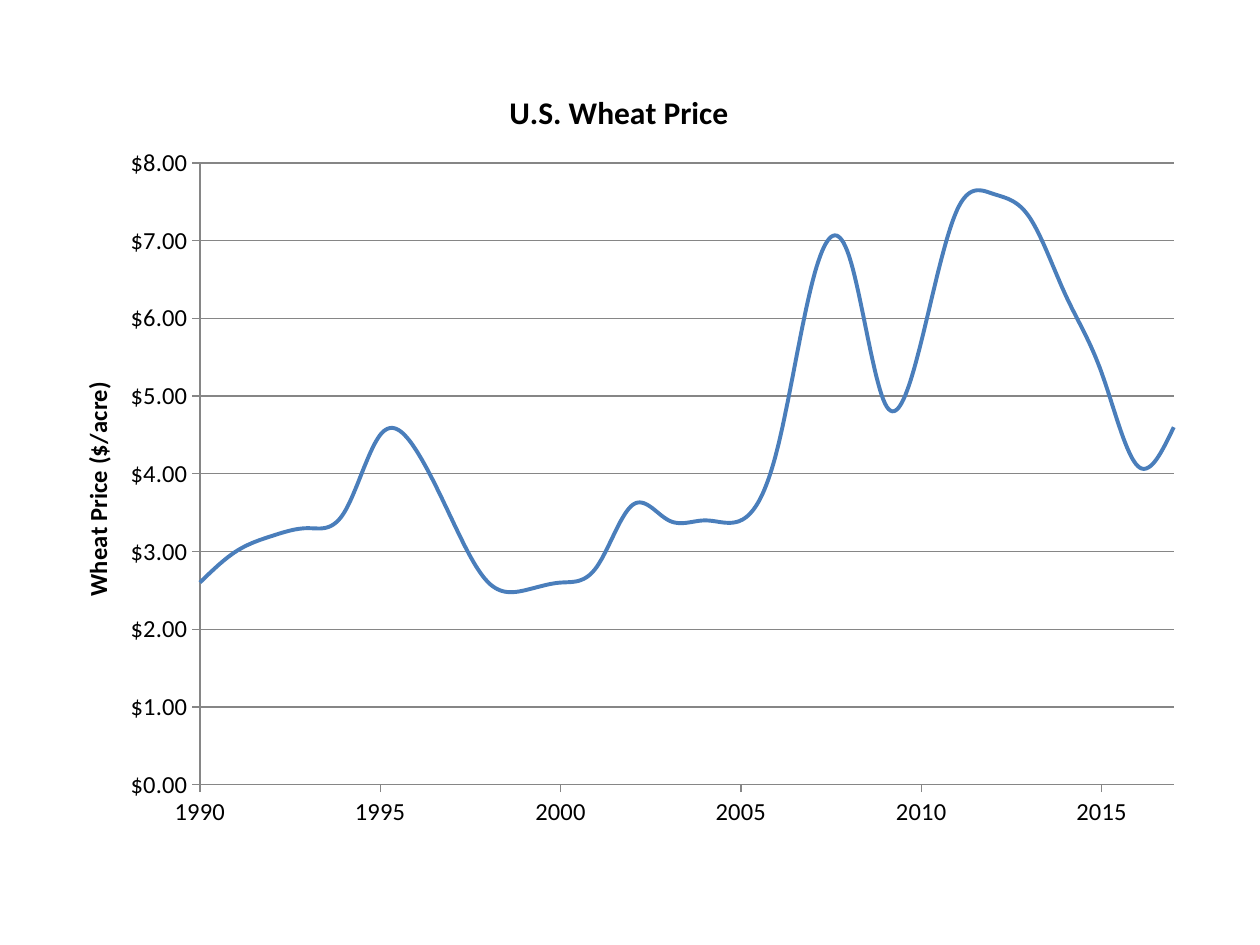
from lxml import etree
from pptx import Presentation
from pptx.chart.data import XyChartData
from pptx.dml.color import RGBColor
from pptx.enum.chart import XL_CHART_TYPE, XL_MARKER_STYLE, XL_TICK_MARK
from pptx.oxml.ns import qn
from pptx.util import Inches, Pt

SMOOTH_SCATTER = XL_CHART_TYPE.XY_SCATTER_SMOOTH_NO_MARKERS
NO_MARKER = XL_MARKER_STYLE.NONE
TICK_OUT, TICK_NONE = XL_TICK_MARK.OUTSIDE, XL_TICK_MARK.NONE

WIDTH, HEIGHT = Inches(10), Inches(7.5)
FONT = "Calibri"
BLACK, GREY, BLUE = "000000", "868686", "4A7EBB"
FIRST_YEAR, LAST_YEAR = 1990, 2017
PRICES = [2.6, 3, 3.2, 3.3, 3.5, 4.5, 4.3, 3.4, 2.6, 2.5,
          2.6, 2.8, 3.6, 3.4, 3.4, 3.4, 4.3, 6.5, 6.8, 4.9,
          5.7, 7.4, 7.6, 7.3, 6.3, 5.3, 4.1, 4.6]


def color(hex_value):
    return RGBColor.from_string(hex_value)


def style_font(font, size, bold=False):
    font.name = FONT
    font.size = Pt(size)
    font.bold = bold
    font.color.rgb = color(BLACK)


def style_line(line, hex_value, width):
    line.color.rgb = color(hex_value)
    line.width = Pt(width)


def place(element, index, **shares):
    """Fix the layout of a chart part, in shares of the chart's size."""
    for old in element.findall(qn("c:layout")):
        element.remove(old)
    layout = etree.Element(qn("c:layout"))
    manual = etree.SubElement(layout, qn("c:manualLayout"))
    if "w" in shares:
        etree.SubElement(manual, qn("c:layoutTarget")).set("val", "inner")
    for key in ("x", "y"):
        etree.SubElement(manual, qn(f"c:{key}Mode")).set("val", "edge")
    for key, share in shares.items():
        etree.SubElement(manual, qn(f"c:{key}")).set("val", str(share))
    element.insert(index, layout)


def set_title(owner, text, size, x, y):
    """Title a chart or an axis; the layout follows the title text."""
    owner.has_title = True
    title = owner.chart_title if hasattr(owner, "chart_title") else owner.axis_title
    p = title.text_frame.paragraphs[0]
    p.text = text
    style_font(p.font, size, bold=True)
    place(title._element, 1, x=x, y=y)


def style_axis(axis, low, high, step, number_format):
    axis.minimum_scale, axis.maximum_scale = low, high
    axis.major_unit = step
    axis.major_tick_mark, axis.minor_tick_mark = TICK_OUT, TICK_NONE
    axis.tick_labels.number_format = number_format
    axis.tick_labels.number_format_is_linked = False
    style_font(axis.tick_labels.font, 14)
    style_line(axis.format.line, GREY, 0.75)


def add_price_chart(slide):
    data = XyChartData()
    prices = data.add_series("Series 1")
    for year, price in enumerate(PRICES, FIRST_YEAR):
        prices.add_data_point(year, price)
    chart = slide.shapes.add_chart(
        SMOOTH_SCATTER, Inches(0.33), Inches(0.42),
        Inches(9.17), Inches(6.28), data).chart
    style_font(chart.font, 10)
    chart.has_legend = False

    # Titles and plot area
    set_title(chart, "U.S. Wheat Price", 18, 0.4, 0.04)
    set_title(chart.value_axis, "Wheat Price ($/acre)", 14, 0.03, 0.41)
    place(chart._chartSpace.chart.plotArea, 0, x=0.137, y=0.139, w=0.843, h=0.786)

    # Axes and gridlines
    style_axis(chart.category_axis, FIRST_YEAR, LAST_YEAR, 5, "General")
    style_axis(chart.value_axis, 0, 8, 1, '"$"#,##0.00')
    chart.category_axis.has_major_gridlines = False
    chart.value_axis.has_major_gridlines = True
    style_line(chart.value_axis.major_gridlines.format.line, GREY, 0.75)

    # Price curve
    plot = chart.plots[0]
    plot.vary_by_categories = False
    series = plot.series[0]
    series.marker.style = NO_MARKER
    style_line(series.format.line, BLUE, 2.25)
    smooth = series._element.find(qn("c:smooth"))
    if smooth is None:
        smooth = etree.SubElement(series._element, qn("c:smooth"))
    smooth.set("val", "1")


def main():
    prs = Presentation()
    prs.slide_width, prs.slide_height = WIDTH, HEIGHT
    slide = prs.slides.add_slide(prs.slide_layouts[6])
    add_price_chart(slide)
    prs.save("out.pptx")


if __name__ == "__main__":
    main()
